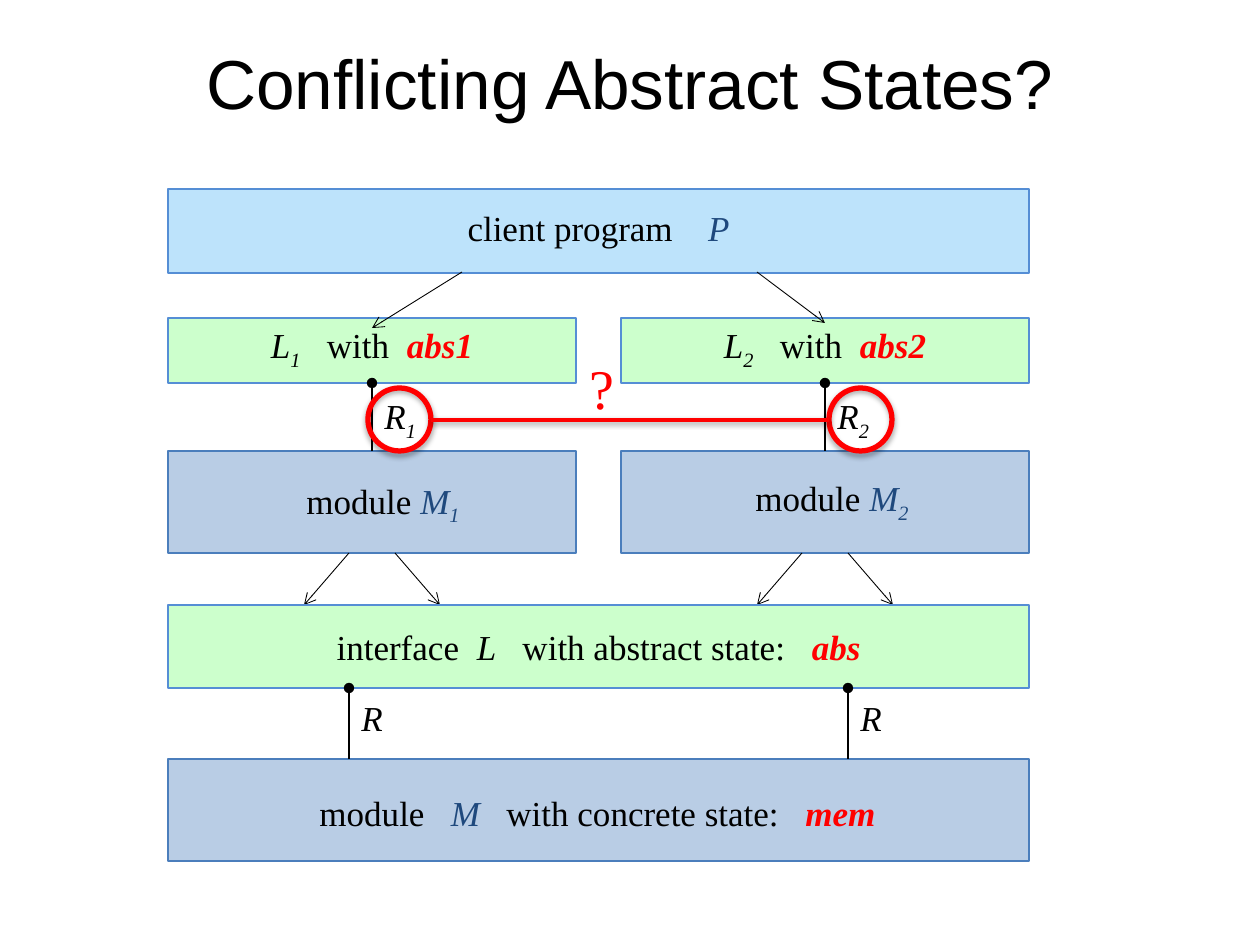
import pptx
import pptx.util
import pptx.dml.color
import pptx.enum.shapes
import pptx.enum.text
import pptx.oxml
import pptx.oxml.ns

PX = 914400 / 126
COLORS = {"black": "000000", "red": "FF0000", "navy": "1F497D", "sky": "BDE3FB",
          "green": "CCFFCC", "blue": "B9CDE5", "edge": "558ED5", "module_edge": "4B7EBC"}
# Text styles: colour, bold, italic, subscript
STYLES = {"plain": ("black", False, False, False), "var": ("black", False, True, False),
          "sub": ("black", False, True, True), "name": ("navy", False, True, False),
          "name_sub": ("navy", False, True, True), "state": ("red", True, True, False),
          "alert": ("red", False, False, False)}
SHAPE = pptx.enum.shapes.MSO_SHAPE
ALIGN = pptx.enum.text.PP_ALIGN
ANCHOR = pptx.enum.text.MSO_ANCHOR


def add_box(box, runs=(), fill=None, edge="edge", align=ALIGN.CENTER, size=20, bottom=0):
    """Add a filled rectangle, or a text box when there is no fill."""
    at = [round(v * PX) for v in box]
    if fill:
        sp = slide.shapes.add_shape(SHAPE.RECTANGLE, *at)
        sp.shadow.inherit = False
        sp.fill.solid()
        sp.fill.fore_color.rgb = pptx.dml.color.RGBColor.from_string(COLORS[fill])
        sp.line.color.rgb = pptx.dml.color.RGBColor.from_string(COLORS[edge])
        sp.line.width = pptx.util.Pt(0.75)
    else:
        sp = slide.shapes.add_textbox(*at)
    tf = sp.text_frame
    tf.word_wrap = True
    if fill:
        tf.vertical_anchor = ANCHOR.MIDDLE
        tf.margin_top, tf.margin_bottom = 0, round(bottom * PX)
    p = tf.paragraphs[0]
    p.alignment = align
    for text, style in runs:
        color, bold, italic, sub = STYLES[style]
        r = p.add_run()
        r.text = text
        r.font.name, r.font.size = "Times New Roman", pptx.util.Pt(size)
        r.font.bold, r.font.italic = bold, italic
        r.font.color.rgb = pptx.dml.color.RGBColor.from_string(COLORS[color])
        if sub:
            r._r.get_or_add_rPr().set("baseline", "-25000")
    return sp


def add_line(points, width, end=None, color="black", shadow=""):
    """Add a straight line with an optional end mark and shadow."""
    c = slide.shapes.add_connector(pptx.enum.shapes.MSO_CONNECTOR.STRAIGHT,
                                   *[round(v * PX) for v in points])
    c.line.width = pptx.util.Pt(width)
    c.line.color.rgb = pptx.dml.color.RGBColor.from_string(COLORS[color])
    ns = pptx.oxml.ns.nsdecls("a")
    if end:
        c.line._get_or_add_ln().append(
            pptx.oxml.parse_xml(f'<a:tailEnd {ns} type="{end}"/>'))
    c._element.spPr.append(
        pptx.oxml.parse_xml(f"<a:effectLst {ns}>{shadow}</a:effectLst>"))
    return c


prs = pptx.Presentation()
prs.slide_width, prs.slide_height = pptx.util.Inches(10), pptx.util.Inches(7.5)
slide = prs.slides.add_slide(prs.slide_layouts[5])

# Title
title = slide.shapes.title
title.left, title.top, title.width, title.height = [round(v * PX) for v in (63, 38, 1134, 88)]
title.text_frame.text = "Conflicting Abstract States?"
title.text_frame.vertical_anchor = ANCHOR.MIDDLE
p = title.text_frame.paragraphs[0]
p.alignment = ALIGN.CENTER
font = p.runs[0].font
font.name, font.size = "Arial", pptx.util.Pt(39.6)
font.color.rgb = pptx.dml.color.RGBColor.from_string(COLORS["black"])

# Two module columns, each with its own interface
LEFT, WIDE, COLUMN, STEP = 168, 861, 408, 453
for i, (label_x, label_y) in enumerate([(213, 473), (662, 470)]):
    n, x = str(i + 1), LEFT + i * STEP
    mid = x + COLUMN // 2
    module = add_box((x, 451, COLUMN, 102), fill="blue", edge="module_edge")
    interface = add_box((x, 318, COLUMN, 65), [("L", "var"), (n, "sub"), ("   with  ", "plain"),
                                               ("abs" + n, "state")], "green", bottom=6)
    add_box((mid, 388, 113, 55), [("R", "var"), (n, "sub")], align=ALIGN.LEFT)
    relation = add_line((mid, 451, mid, 383), 1, "oval")
    relation.begin_connect(module, 0)
    relation.end_connect(interface, 2)
    for side in (-1, 1):
        add_line((mid + side * 23, 553, mid + side * 68, 605), 0.5, "arrow")
    add_box((label_x, label_y, 340, 55),
            [("module ", "plain"), ("M", "name"), (n, "name_sub")])

# Shared interface and bottom module
add_box((LEFT, 605, WIDE, 83), [("interface  ", "plain"), ("L", "var"),
                                ("   with abstract state:   ", "plain"), ("abs", "state")], "green")
add_box((LEFT, 759, WIDE, 102), fill="blue", edge="module_edge")
add_box((190, 785, 815, 55), [("module   ", "plain"), ("M  ", "name"),
                              (" with concrete state:   ", "plain"), ("mem", "state")])
for x in (349, 848):
    add_line((x, 759, x, 688), 1, "oval")
    add_box((x, 690, 80, 55), [("R", "var")], align=ALIGN.LEFT)

# Client program
add_box((LEFT, 189, WIDE, 84), [("client program    ", "plain"), ("P", "name")], "sky", bottom=8)
add_line((462, 272, 372, 328), 0.5, "arrow")
add_line((757, 272, 825, 323), 0.5, "arrow")

# Conflict between the two relations
SHADOW = ('<a:outerShdw blurRad="40000" dist="{}" dir="5400000" rotWithShape="0">'
          '<a:srgbClr val="000000"><a:alpha val="{}"/></a:srgbClr></a:outerShdw>')
for x in (368, 829):
    ring = slide.shapes.add_shape(SHAPE.OVAL, *[round(v * PX) for v in (x, 388, 63, 63)])
    ring.fill.background()
    ring.line.color.rgb = pptx.dml.color.RGBColor.from_string(COLORS["red"])
    ring.line.width = pptx.util.Pt(3)
    ring._element.spPr.append(pptx.oxml.parse_xml(
        f'<a:effectLst {pptx.oxml.ns.nsdecls("a")}>{SHADOW.format(23000, 35000)}</a:effectLst>'))
add_line((431, 420, 829, 420), 2, color="red", shadow=SHADOW.format(20000, 38000))
add_box((577, 347, 53, 81), [("?", "alert")], align=ALIGN.LEFT, size=32)

prs.save("out.pptx")
